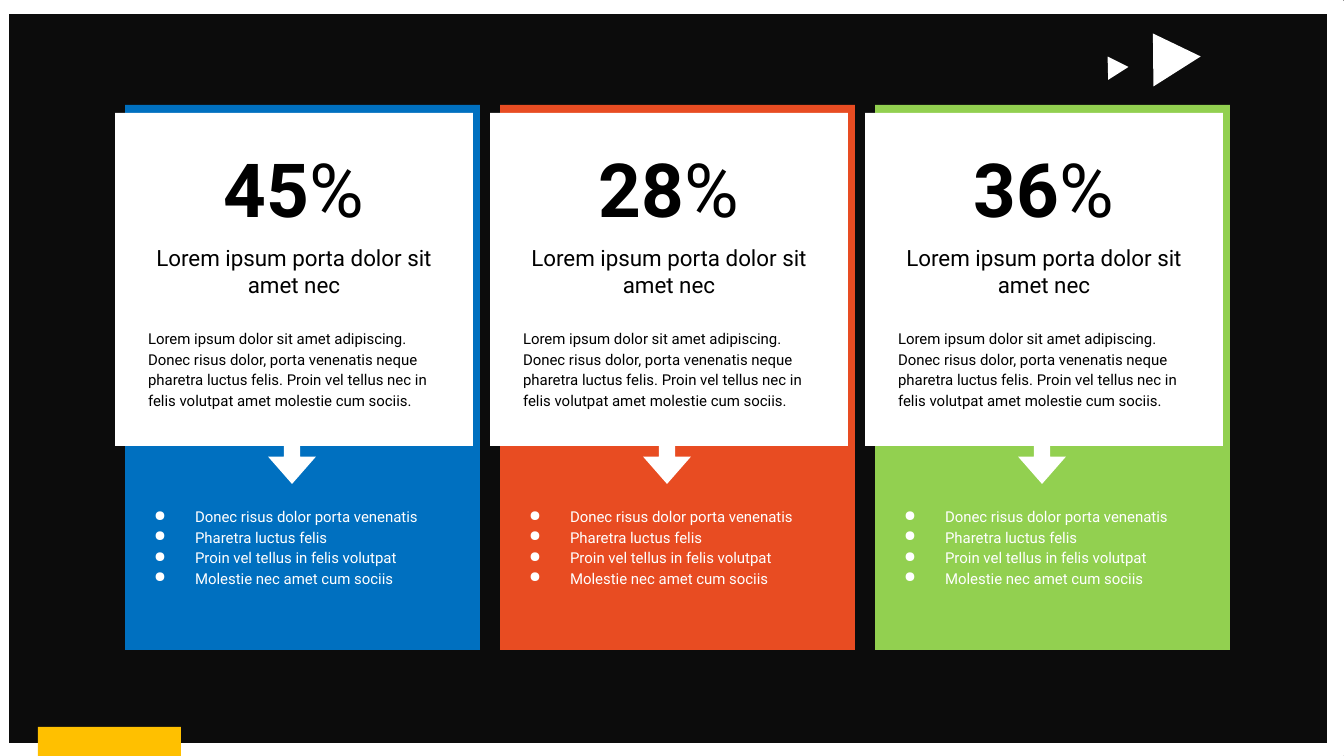
import pptx
import pptx.util
from lxml import etree
from pptx.dml.color import RGBColor
from pptx.enum.shapes import MSO_SHAPE
from pptx.enum.text import MSO_ANCHOR, PP_ALIGN
from pptx.oxml.ns import qn

PX = 12192000 // 1344
FONT = "Roboto"
BLACK = RGBColor(0x00, 0x00, 0x00)
WHITE = RGBColor(0xFF, 0xFF, 0xFF)
NEAR_BLACK = RGBColor(0x0C, 0x0C, 0x0C)
BLUE = RGBColor(0x00, 0x70, 0xC0)
ORANGE = RGBColor(0xE8, 0x4C, 0x22)
GREEN = RGBColor(0x92, 0xD0, 0x50)
AMBER = RGBColor(0xFF, 0xC0, 0x00)

CARDS = [("45", BLUE), ("28", ORANGE), ("36", GREEN)]
CARD_PITCH = 375
HEADING = "Lorem ipsum porta dolor sit amet nec"
BODY = ("Lorem ipsum dolor sit amet adipiscing. Donec risus dolor, porta "
        "venenatis neque pharetra luctus felis. Proin vel tellus nec in "
        "felis volutpat amet molestie cum sociis.")
BULLETS = [
    "Donec risus dolor porta venenatis",
    "Pharetra luctus felis",
    "Proin vel tellus in felis volutpat",
    "Molestie nec amet cum sociis",
]


def add_filled(shapes, kind, box, color, rotation=0):
    sp = shapes.add_shape(kind, *(v * PX for v in box))
    sp.shadow.inherit = False
    sp.fill.solid()
    sp.fill.fore_color.rgb = color
    sp.line.fill.background()
    sp.rotation = rotation
    return sp


def add_text(shapes, box, paragraphs, size, color, align=PP_ALIGN.LEFT, spacing=None):
    """Add a text box; each paragraph is a list of run texts."""
    tf = shapes.add_textbox(*(v * PX for v in box)).text_frame
    tf.word_wrap = True
    tf.vertical_anchor = MSO_ANCHOR.TOP
    tf.margin_left = tf.margin_right = tf.margin_top = tf.margin_bottom = 13 * PX
    for i, runs in enumerate(paragraphs):
        p = tf.paragraphs[0] if i == 0 else tf.add_paragraph()
        p.alignment = align
        p.line_spacing = spacing
        p.font.name = FONT
        p.font.size = pptx.util.Pt(size)
        p.font.color.rgb = color
        for text in runs:
            p.add_run().text = text
    return tf


prs = pptx.Presentation()
prs.slide_width = 1344 * PX
prs.slide_height = 756 * PX
slide = prs.slides.add_slide(prs.slide_layouts[6])
slide.background.fill.solid()
slide.background.fill.fore_color.rgb = NEAR_BLACK

frame = add_filled(slide.shapes, MSO_SHAPE.RECTANGLE, (0, 5, 1336, 747), WHITE)
frame.fill.background()
frame.line.color.rgb = WHITE
frame.line.width = pptx.util.Pt(12.25)

for i, (number, color) in enumerate(CARDS):
    x = 115 + i * CARD_PITCH
    card = slide.shapes.add_group_shape().shapes
    add_filled(card, MSO_SHAPE.RECTANGLE, (x + 10, 105, 355, 545), color)
    add_filled(card, MSO_SHAPE.RECTANGLE, (x, 113, 358, 333), WHITE)
    add_text(card, (x + 20, 231, 318, 82), [[HEADING]], 16, BLACK, PP_ALIGN.CENTER)
    add_text(card, (x + 20, 314, 318, 111), [[BODY]], 10.7, BLACK, spacing=1.15)
    tf = add_text(card, (x + 20, 130, 318, 91), [[number, "%"]], 53.3, BLACK,
                  PP_ALIGN.CENTER)
    tf.paragraphs[0].runs[0].font.bold = True

    arrow = add_filled(card, MSO_SHAPE.RIGHT_ARROW, (x + 151, 434, 52, 48), WHITE, 90)
    arrow.adjustments[0] = 0.34
    arrow.adjustments[1] = 0.57

    tf = add_text(card, (x, 492, 355, 145), [[text] for text in BULLETS], 10.7, WHITE,
                  spacing=1.15)
    for p in tf.paragraphs:
        pPr = p._p.get_or_add_pPr()
        pPr.set("marL", str(67 * PX))
        pPr.set("indent", str(-41 * PX))
        bullet_color = etree.Element(qn("a:buClr"))
        etree.SubElement(bullet_color, qn("a:srgbClr"), val=str(WHITE))
        bullet = etree.Element(qn("a:buChar"), char="●")
        default_font = pPr.find(qn("a:defRPr"))
        default_font.addprevious(bullet_color)
        default_font.addprevious(bullet)

for box in [(1137, 30, 56, 45), (1101, 55, 24, 20)]:
    add_filled(slide.shapes, MSO_SHAPE.ISOSCELES_TRIANGLE, box, WHITE, 327.6)
add_filled(slide.shapes, MSO_SHAPE.RECTANGLE, (38, 727, 143, 29), AMBER)

prs.save("out.pptx")
